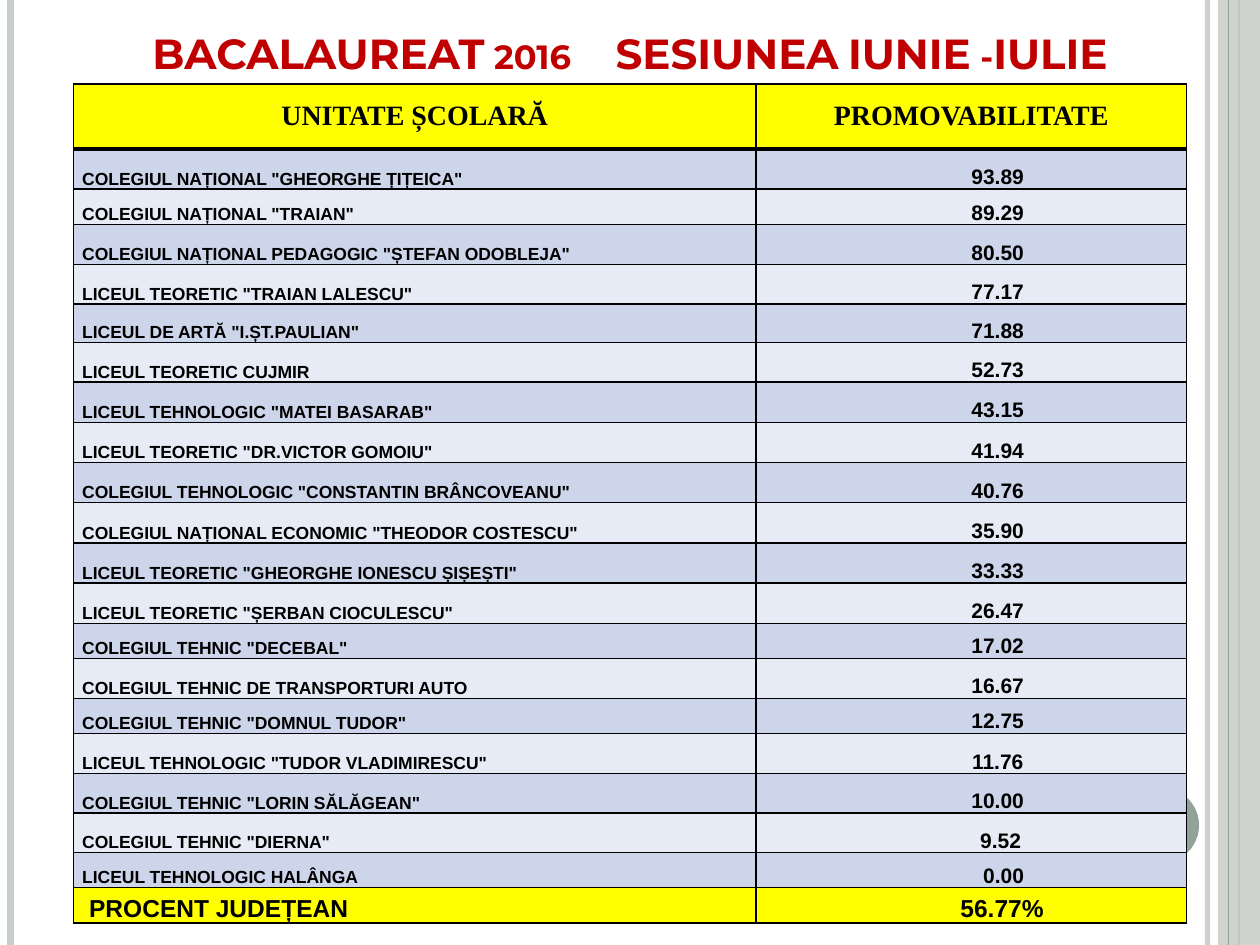
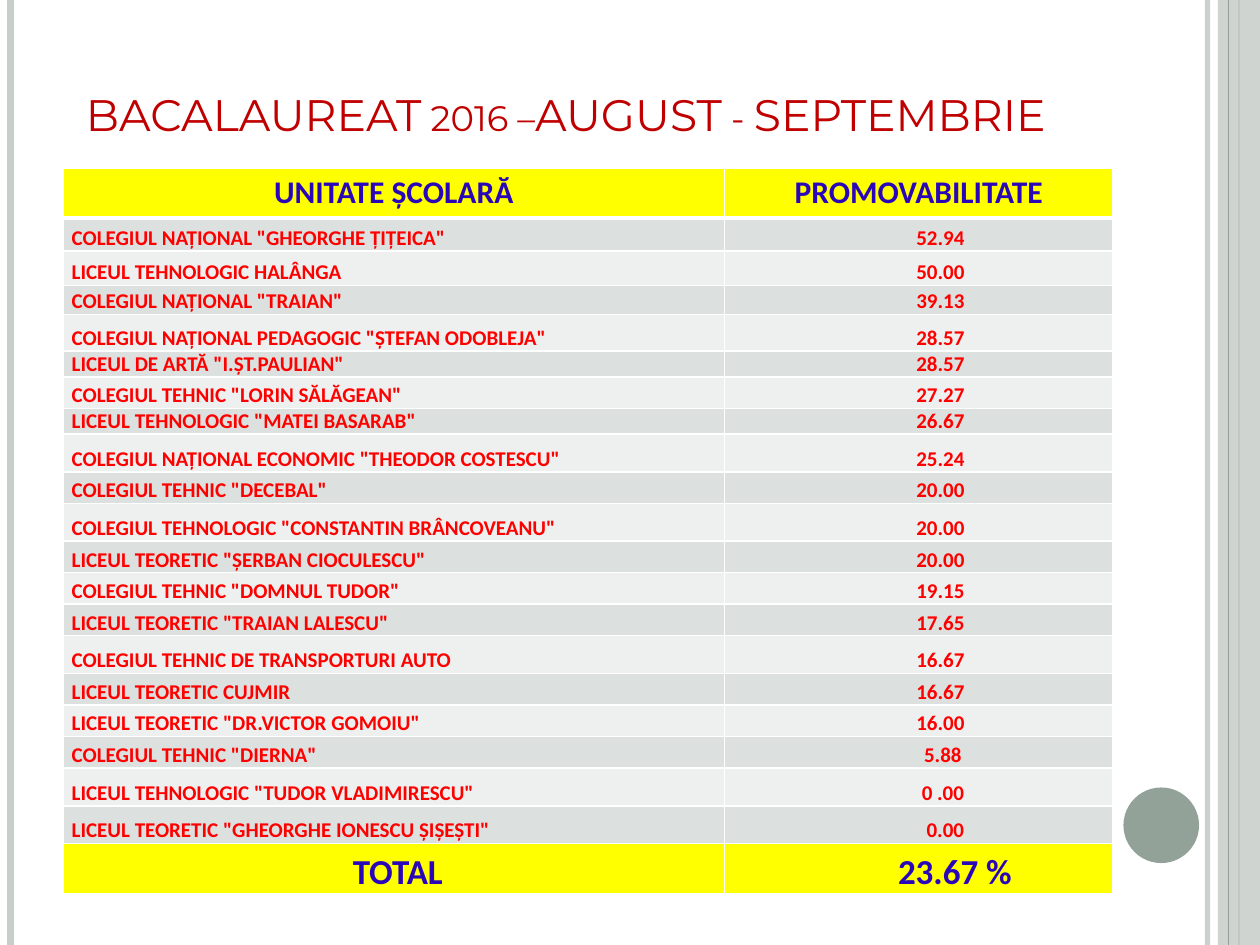
"""Builds two slides of exam pass rates by school."""
from lxml.etree import SubElement
from pptx import Presentation
from pptx.dml.color import RGBColor
from pptx.enum.shapes import MSO_CONNECTOR, MSO_SHAPE
from pptx.enum.text import MSO_ANCHOR, PP_ALIGN
from pptx.oxml.ns import qn
from pptx.util import Pt

WIDE, HIGH = 720, 540
SAGE, MIST, RED, YELLOW = "93A299", "C8CECA", "C00000", "FFFF00"
HEAD = ("UNITATE ȘCOLARĂ", "PROMOVABILITATE")
PADS = {"9.52": 10, "5.88": 10, "0 .00": 10, "0.00": 11}

JUNE = {
    "title": [("BACALAUREAT 2016", 0), (" ", 10), ("SESIUNEA IUNIE -IULIE", 0)],
    "box": (36, 18, 648, 30),
    "look": {"size": 24, "bold": True, "align": PP_ALIGN.CENTER},
    "spot": (42, 48), "cols": (390, 246),
    "rows": [
        ('COLEGIUL NAȚIONAL "GHEORGHE ȚIȚEICA"', "93.89", 22.9),
        ('COLEGIUL NAȚIONAL "TRAIAN"', "89.29", 20.3),
        ('COLEGIUL NAȚIONAL PEDAGOGIC "ȘTEFAN ODOBLEJA"', "80.50", 22.9),
        ('LICEUL TEORETIC "TRAIAN LALESCU"', "77.17", 22.6),
        ('LICEUL DE ARTĂ "I.ȘT.PAULIAN"', "71.88", 22),
        ("LICEUL TEORETIC CUJMIR", "52.73", 22.6),
        ('LICEUL TEHNOLOGIC "MATEI BASARAB"', "43.15", 23),
        ('LICEUL TEORETIC "DR.VICTOR GOMOIU"', "41.94", 23),
        ('COLEGIUL TEHNOLOGIC "CONSTANTIN BRÂNCOVEANU"', "40.76", 23),
        ('COLEGIUL NAȚIONAL ECONOMIC "THEODOR COSTESCU"', "35.90", 23),
        ('LICEUL TEORETIC "GHEORGHE IONESCU ȘIȘEȘTI"', "33.33", 23),
        ('LICEUL TEORETIC "ȘERBAN CIOCULESCU"', "26.47", 23),
        ('COLEGIUL TEHNIC "DECEBAL"', "17.02", 20),
        ("COLEGIUL TEHNIC DE TRANSPORTURI AUTO", "16.67", 22.9),
        ('COLEGIUL TEHNIC "DOMNUL TUDOR"', "12.75", 20),
        ('LICEUL TEHNOLOGIC "TUDOR VLADIMIRESCU"', "11.76", 23),
        ('COLEGIUL TEHNIC "LORIN SĂLĂGEAN"', "10.00", 22.6),
        ('COLEGIUL TEHNIC "DIERNA"', "9.52", 22.6),
        ("LICEUL TEHNOLOGIC HALÂNGA", "0.00", 20),
    ],
    "total": ("PROCENT JUDEȚEAN", "56.77%"), "side": PP_ALIGN.LEFT,
    "ends": (37.1, 20.2), "bands": ("CCD5EA", "E7EBF5"), "edge": "000000",
    "head": {"font": "Times New Roman", "size": 16, "color": "000000"},
    "body": {"font": "Arial", "color": "000000"},
    "foot": {"font": "Arial", "size": 14, "color": "000000"},
    "sizes": (10, 12), "space": 0.28,
}
AUGUST = {
    "title": [("BACALAUREAT 2016 –AUGUST - SEPTEMBRIE", 0)],
    "box": (42, 18, 648, 66),
    "look": {"size": 25.2, "bold": False, "align": PP_ALIGN.LEFT},
    "spot": (36, 96), "cols": (378, 222),
    "rows": [
        ('COLEGIUL NAȚIONAL "GHEORGHE ȚIȚEICA"', "52.94", 18.9),
        ("LICEUL TEHNOLOGIC HALÂNGA", "50.00", 19.7),
        ('COLEGIUL NAȚIONAL "TRAIAN"', "39.13", 16.6),
        ('COLEGIUL NAȚIONAL PEDAGOGIC "ȘTEFAN ODOBLEJA"', "28.57", 21),
        ('LICEUL DE ARTĂ "I.ȘT.PAULIAN"', "28.57", 14.7),
        ('COLEGIUL TEHNIC "LORIN SĂLĂGEAN"', "27.27", 18),
        ('LICEUL TEHNOLOGIC "MATEI BASARAB"', "26.67", 14.7),
        ('COLEGIUL NAȚIONAL ECONOMIC "THEODOR COSTESCU"', "25.24", 21.6),
        ('COLEGIUL TEHNIC "DECEBAL"', "20.00", 18),
        ('COLEGIUL TEHNOLOGIC "CONSTANTIN BRÂNCOVEANU"', "20.00", 21.6),
        ('LICEUL TEORETIC "ȘERBAN CIOCULESCU"', "20.00", 18),
        ('COLEGIUL TEHNIC "DOMNUL TUDOR"', "19.15", 18),
        ('LICEUL TEORETIC "TRAIAN LALESCU"', "17.65", 18),
        ("COLEGIUL TEHNIC DE TRANSPORTURI AUTO", "16.67", 21.6),
        ("LICEUL TEORETIC CUJMIR", "16.67", 18),
        ('LICEUL TEORETIC "DR.VICTOR GOMOIU"', "16.00", 18),
        ('COLEGIUL TEHNIC "DIERNA"', "5.88", 18),
        ('LICEUL TEHNOLOGIC "TUDOR VLADIMIRESCU"', "0 .00", 21.6),
        ('LICEUL TEORETIC "GHEORGHE IONESCU ȘIȘEȘTI"', "0.00", 21.6),
    ],
    "total": ("TOTAL", "23.67 %"), "side": PP_ALIGN.CENTER,
    "ends": (28.6, 28.6), "bands": ("DCE0DE", "EEF0EF"), "edge": "FFFFFF",
    "head": {"font": "Calibri", "size": 18, "color": "2907B9"},
    "body": {"font": "Calibri", "color": "FF0000"},
    "foot": {"font": "Calibri", "size": 20, "color": "2907B9"},
    "sizes": (12, 12), "space": 0.23,
}


def paint(fmt, color, alpha=100):
    fmt.solid()
    fmt.fore_color.rgb = RGBColor.from_string(color)
    return alpha


def fade(shape, alpha):
    for tone in shape.element.spPr.iter(qn("a:srgbClr")):
        SubElement(tone, qn("a:alpha"), val=str(alpha * 1000))


def write(frame, text, font, size, color, bold=True, align=PP_ALIGN.LEFT,
          pad=0, gap=0, small=False):
    para = frame.paragraphs[0]
    para.alignment = align
    if pad:
        para._p.get_or_add_pPr().set("marL", str(Pt(pad)))
    run = para.add_run()
    run.text = text
    run.font.name, run.font.size, run.font.bold = font, Pt(size), bold
    paint(run.font.fill, color)
    if gap:
        run._r.rPr.set("spc", str(gap * 100))
    if small:
        run._r.rPr.set("cap", "small")


def rule(slide, x, width, color, alpha=100):
    line = slide.shapes.add_connector(
        MSO_CONNECTOR.STRAIGHT, Pt(x), Pt(0), Pt(x), Pt(HIGH))
    line.line.width = Pt(width)
    paint(line.line.fill, color)
    SubElement(line.element.spPr, qn("a:effectLst"))
    if alpha < 100:
        fade(line, alpha)


def block(slide, kind, box, color, alpha=100):
    shape = slide.shapes.add_shape(kind, *map(Pt, box))
    shape.shadow.inherit = False
    paint(shape.fill, color)
    shape.line.fill.background()
    if alpha < 100:
        fade(shape, alpha)


def frame(slide):
    rule(slide, 690, 3, MIST, 93)
    rule(slide, 6, 4.5, MIST)
    rule(slide, 708, 1.5, SAGE)
    block(slide, MSO_SHAPE.RECTANGLE, (696, 0, 24, HIGH), MIST, 87)
    rule(slide, 702, 0.75, SAGE)
    block(slide, MSO_SHAPE.OVAL, (642, 450, 43.2, 43.2), SAGE)


def title(slide, data):
    text = slide.shapes.add_textbox(*map(Pt, data["box"])).text_frame
    text.word_wrap = True
    text.vertical_anchor = MSO_ANCHOR.BOTTOM
    for part, gap in data["title"]:
        write(text, part, "Montserrat", color=RED, gap=gap, small=True,
              **data["look"])


def style(cell, fill, edge, top, base, anchor):
    props = cell._tc.get_or_add_tcPr()
    for side, width in zip("LRTB", (1, 1, top, base)):
        line = SubElement(props, qn("a:ln" + side), w=str(Pt(width)))
        SubElement(SubElement(line, qn("a:solidFill")), qn("a:srgbClr"), val=edge)
    paint(cell.fill, fill)
    cell.margin_left = cell.margin_right = Pt(5)
    cell.margin_top = cell.margin_bottom = 0
    cell.vertical_anchor = anchor


def grid(slide, data):
    rows = data["rows"]
    first, last = data["ends"]
    highs = [first] + [row[2] for row in rows] + [last]
    table = slide.shapes.add_table(
        len(highs), 2, *map(Pt, data["spot"]),
        Pt(sum(data["cols"])), Pt(sum(highs))).table
    table.first_row = table.horz_banding = False
    for col, width in zip(table.columns, data["cols"]):
        col.width = Pt(width)
    pairs = [HEAD] + [row[:2] for row in rows] + [data["total"]]
    for r, (pair, high) in enumerate(zip(pairs, highs)):
        table.rows[r].height = Pt(high)
        head, foot = r == 0, r == len(rows) + 1
        fill = YELLOW if head or foot else data["bands"][(r - 1) % 2]
        for c, text in enumerate(pair):
            cell = table.cell(r, c)
            style(cell, fill, data["edge"], 3 if r == 1 else 1, 3 if head else 1,
                  MSO_ANCHOR.MIDDLE if head else MSO_ANCHOR.BOTTOM)
            look = data["head" if head else "foot" if foot else "body"]
            look = {"size": data["sizes"][c], **look}
            side = data["side"] if foot else PP_ALIGN.LEFT
            count = 0 if head else PADS.get(text, 9) if c else int(foot)
            write(cell.text_frame, text, pad=count * look["size"] * data["space"],
                  align=PP_ALIGN.CENTER if head or c else side, **look)


def main():
    deck = Presentation()
    deck.slide_width, deck.slide_height = Pt(WIDE), Pt(HIGH)
    for data in (JUNE, AUGUST):
        slide = deck.slides.add_slide(deck.slide_layouts[6])
        frame(slide)
        title(slide, data)
        grid(slide, data)
    deck.save("out.pptx")


if __name__ == "__main__":
    main()
